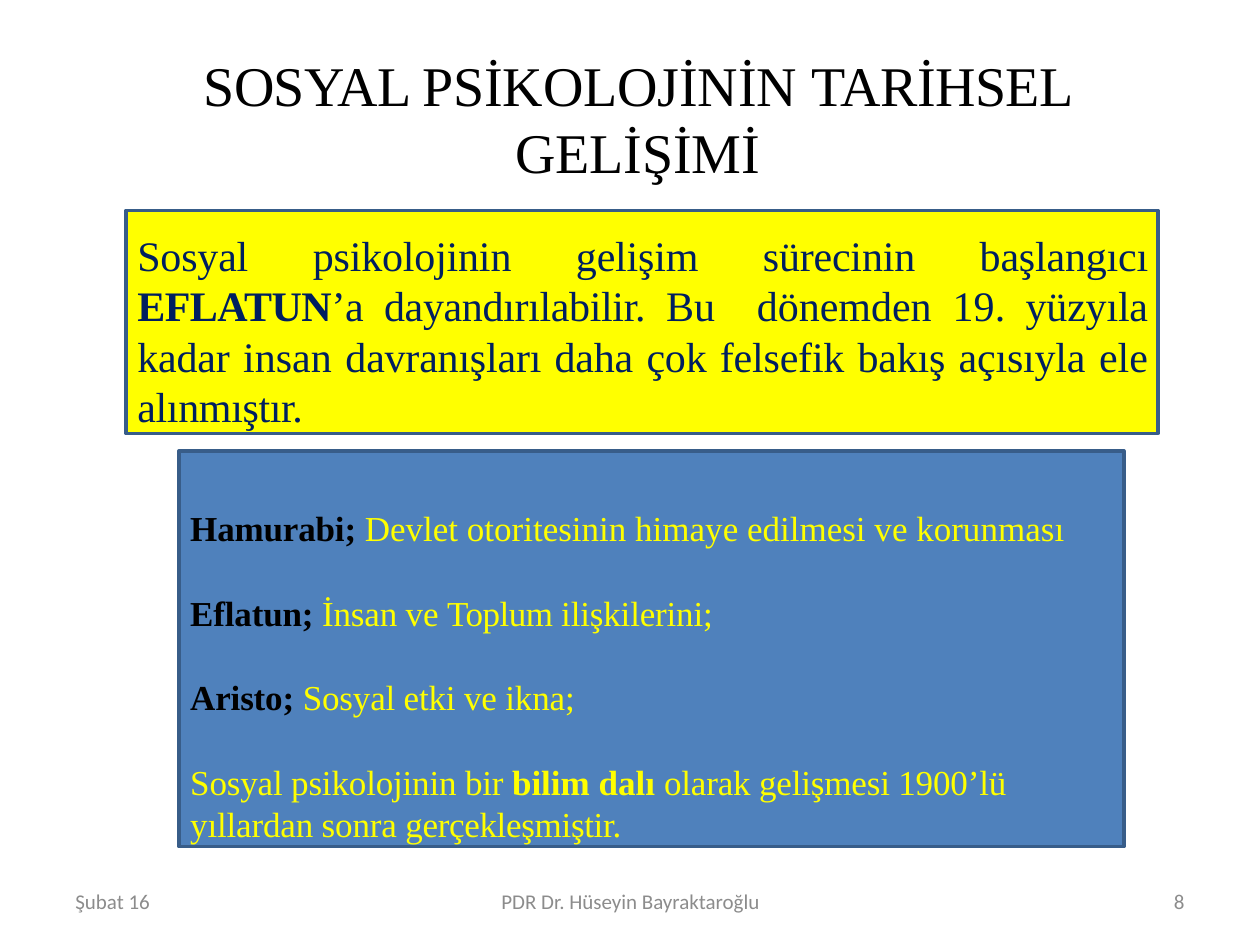
from pptx import Presentation
from pptx.dml.color import RGBColor
from pptx.enum.shapes import MSO_SHAPE
from pptx.enum.text import MSO_ANCHOR, PP_ALIGN
from pptx.util import Inches, Pt

SERIF = "Times New Roman"
BLACK, NAVY, YELLOW, GRAY = "000000", "001F5F", "FFFF00", "8C8C8C"


def color(value):
    return RGBColor.from_string(value)


def set_frame(shape, anchor, insets):
    frame = shape.text_frame
    frame.word_wrap = True
    frame.vertical_anchor = anchor
    left, top, right, bottom = map(Inches, insets)
    frame.margin_left, frame.margin_top = left, top
    frame.margin_right, frame.margin_bottom = right, bottom
    return frame


def add_text(slide, position, insets=(0.1, 0.05, 0.1, 0.05)):
    shape = slide.shapes.add_textbox(*map(Inches, position))
    return set_frame(shape, MSO_ANCHOR.MIDDLE, insets)


def add_panel(slide, position, fill, top_inset):
    shape = slide.shapes.add_shape(MSO_SHAPE.RECTANGLE, *map(Inches, position))
    shape.shadow.inherit = False
    shape.fill.solid()
    shape.fill.fore_color.rgb = color(fill)
    shape.line.color.rgb = color("385D89")
    shape.line.width = Pt(2)
    return set_frame(shape, MSO_ANCHOR.TOP, (0, top_inset, 0.08, 0))


def format_paragraph(paragraph, alignment, indent=0, space_before=0):
    paragraph.alignment = alignment
    paragraph.space_before = Pt(space_before)
    paragraph._p.get_or_add_pPr().set("marL", str(Inches(indent)))


def add_run(paragraph, text, size, text_color, bold=False, spacing=0, font=SERIF):
    run = paragraph.add_run()
    run.text = text
    run.font.name = font
    run.font.size = Pt(size)
    run.font.bold = bold
    run.font.color.rgb = color(text_color)
    run._r.get_or_add_rPr().set("spc", str(round(spacing * 100)))


def add_title(slide):
    paragraph = add_text(slide, (0.5, 0.39, 9, 1.08), (0, 0, 0, 0)).paragraphs[0]
    format_paragraph(paragraph, PP_ALIGN.CENTER, 0.12)
    for text, spacing in [
        ("SOSYAL ", -0.5),
        ("PSİKOLOJİNİN ", -0.1),
        ("TARİHSEL ", -0.3),
        ("GELİŞİMİ", -0.1),
    ]:
        add_run(paragraph, text, 32, BLACK, spacing=spacing)


def add_origin_panel(slide):
    paragraph = add_panel(slide, (1, 1.67, 8.19, 1.77), YELLOW, 0.15).paragraphs[0]
    format_paragraph(paragraph, PP_ALIGN.JUSTIFY, 0.09, 10.8)
    for text, bold, spacing in [
        ("Sosyal psikolojinin gelişim sürecinin başlangıcı ", False, -0.1),
        ("EFLATUN", True, -0.3),
        ("’a ", False, -0.3),
        ("dayandırılabilir. ", False, -0.2),
        ("Bu  dönemden 19", False, 0),
        (". yüzyıla kadar ", False, -0.1),
        ("insan ", False, 0),
        ("davranışları daha çok felsefik bakış açısıyla ", False, -0.1),
        ("ele ", False, 0),
        ("alınmıştır.", False, -0.2),
    ]:
        add_run(paragraph, text, 24, NAVY, bold, spacing)


def add_thinkers_panel(slide):
    frame = add_panel(slide, (1.42, 3.58, 7.5, 3.14), "4F81BC", 0.44)
    paragraphs = [
        [
            ("Hamurabi; ", BLACK, True, -0.1),
            ("Devlet otoritesinin himaye edilmesi ve korunması", YELLOW, False, 0),
        ],
        [
            ("Eflatun; ", BLACK, True, -0.1),
            ("İnsan ve ", YELLOW, False, -0.1),
            ("Toplum ", YELLOW, False, -0.3),
            ("ilişkilerini;", YELLOW, False, -0.1),
        ],
        [
            ("Aristo; ", BLACK, True, -0.1),
            ("Sosyal etki ve ikna;", YELLOW, False, -0.1),
        ],
        [
            ("Sosyal psikolojinin bir ", YELLOW, False, -0.1),
            ("bilim dalı ", YELLOW, True, 0),
            ("olarak gelişmesi 1900’lü yıllardan sonra ", YELLOW, False, -0.1),
            ("gerçekleşmiştir.", YELLOW, False, -0.2),
        ],
    ]
    for index, runs in enumerate(paragraphs):
        paragraph = frame.add_paragraph() if index else frame.paragraphs[0]
        format_paragraph(paragraph, PP_ALIGN.LEFT, 0.09, 24.3 if index else 0)
        for text, text_color, bold, spacing in runs:
            add_run(paragraph, text, 20, text_color, bold, spacing)


def add_footer(slide, text, left, width, alignment):
    paragraph = add_text(slide, (left, 6.95, width, 0.4)).paragraphs[0]
    format_paragraph(paragraph, alignment)
    add_run(paragraph, text, 12, GRAY, font="Calibri")


def main():
    presentation = Presentation()
    presentation.slide_width = Inches(10)
    presentation.slide_height = Inches(7.5)
    slide = presentation.slides.add_slide(presentation.slide_layouts[6])
    add_title(slide)
    add_origin_panel(slide)
    add_thinkers_panel(slide)
    add_footer(slide, "Şubat 16", 0.5, 2.33, PP_ALIGN.LEFT)
    add_footer(slide, "PDR Dr. Hüseyin Bayraktaroğlu", 3.42, 3.17, PP_ALIGN.CENTER)
    add_footer(slide, "8", 7.17, 2.33, PP_ALIGN.RIGHT)
    presentation.save("out.pptx")


if __name__ == "__main__":
    main()
